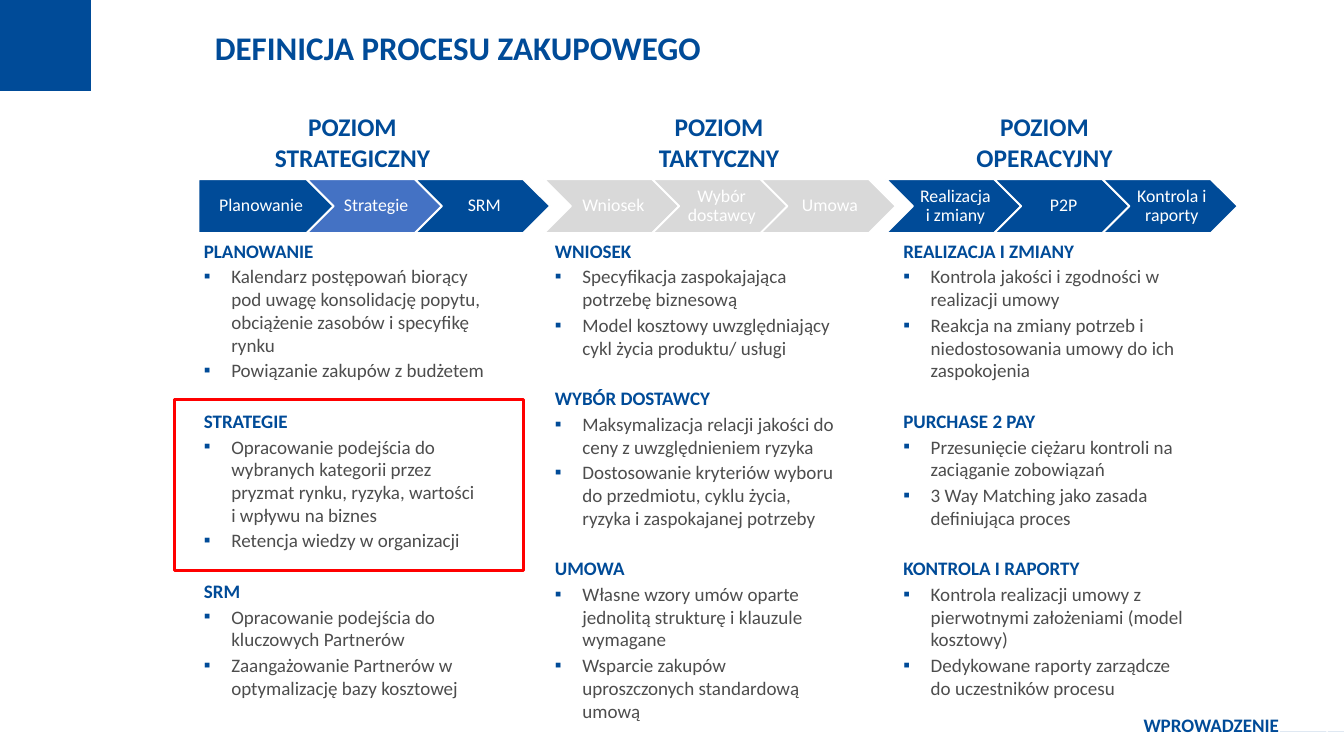
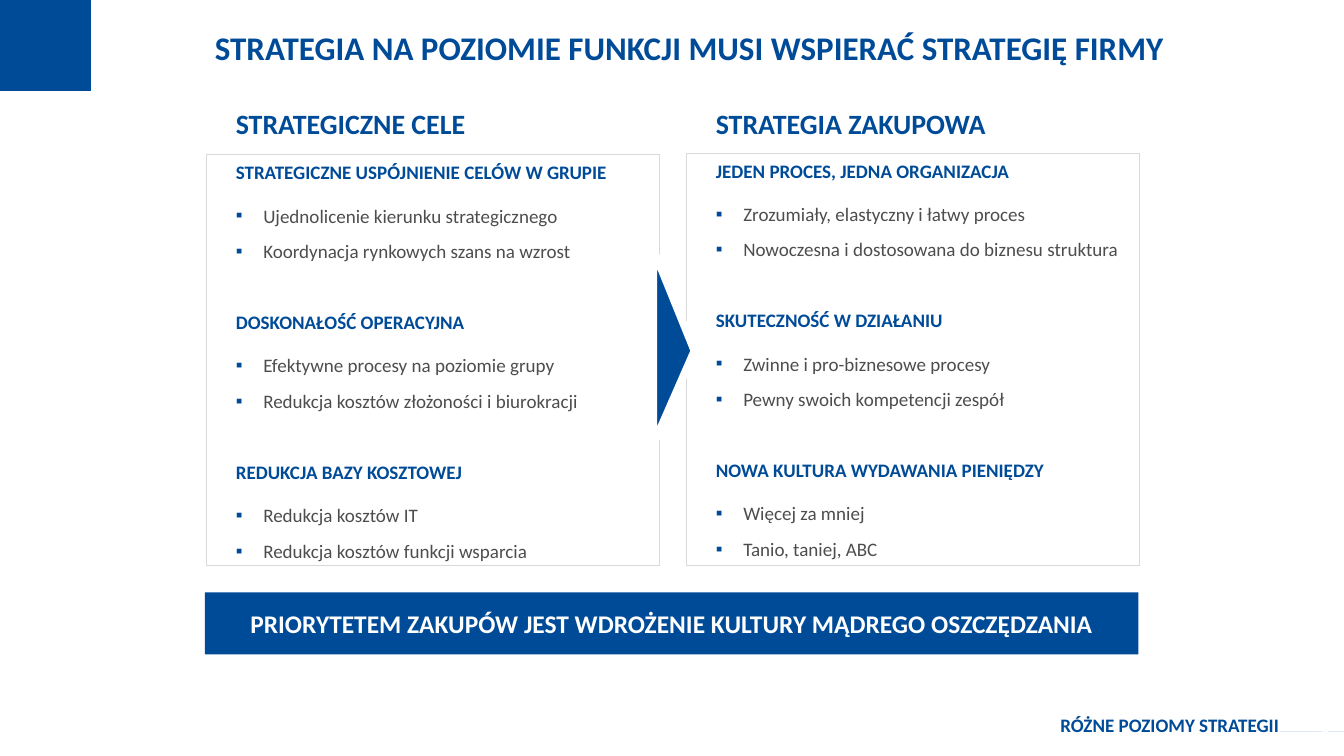
"""Build two slides on the purchasing process and the purchasing strategy."""
from dataclasses import dataclass
from typing import Any

from pptx import Presentation
from pptx import util as u
from pptx.dml.color import RGBColor
from pptx.enum import shapes, text
from pptx.oxml import ns
from lxml import etree

NAVY = RGBColor(0x00, 0x4B, 0x98)
BLUE = RGBColor(0x44, 0x72, 0xC4)
SILVER = RGBColor(0xD9, 0xD9, 0xD9)
GRAPHITE = RGBColor(0x4D, 0x4D, 0x4D)
WHITE = RGBColor(0xFF, 0xFF, 0xFF)
RED = RGBColor(0xFF, 0x00, 0x00)

SHAPE = shapes.MSO_SHAPE
LEFT, CENTER, RIGHT = text.PP_ALIGN.LEFT, text.PP_ALIGN.CENTER, text.PP_ALIGN.RIGHT
TOP, MIDDLE = text.MSO_ANCHOR.TOP, text.MSO_ANCHOR.MIDDLE
TEXT_INSETS = (0.11, 0.05, 0.11, 0.05)
BANDS = (
    ((0, 0.12), (0.96, 0.12), (0.64, 0.91), (0, 0.91)),
    ((14.22, 7.76), (14.7, 7.76), (14.7, 8.16), (14.06, 8.16)),
)
CHEVRON_TOP, CHEVRON_WIDTH, CHEVRON_HEIGHT = 1.96, 1.48, 0.59
CHEVRON_STEP = CHEVRON_WIDTH * 0.8


@dataclass(frozen=True)
class Box:
    """A rectangle in inches."""

    left: float
    top: float
    width: float
    height: float

    def lengths(self) -> tuple[u.Length, ...]:
        """Return the four values as lengths."""
        return tuple(u.Inches(value) for value in (self.left, self.top, self.width, self.height))


@dataclass(frozen=True)
class Style:
    """The look of one paragraph, with lengths in points and indents in inches."""

    size: float
    color: RGBColor
    bold: bool = True
    align: Any = LEFT
    line: float = 1.0
    before: float = 0
    after: float = 0
    margin: float = 0
    hanging: float = 0


@dataclass(frozen=True)
class Topic:
    """A heading with its bullet points."""

    heading: str
    points: tuple[str, ...]


@dataclass(frozen=True)
class Spacing:
    """Paragraph spacing of a topic list in points."""

    before: float
    heading_after: float
    point_after: float
    topic_gap: float


@dataclass(frozen=True)
class Level:
    """One process level: its caption, chevrons and list of topics."""

    caption: str
    caption_left: float
    chevron_left: float
    steps: tuple[str, ...]
    fills: tuple[RGBColor, ...]
    placeholder: int
    list_left: float
    topics: tuple[Topic, ...]


@dataclass(frozen=True)
class Panel:
    """A framed list with its heading."""

    heading: str
    heading_placeholder: int
    list_placeholder: int
    frame: Box
    list_box: Box
    topics: tuple[Topic, ...]


TITLE = Style(26, NAVY, line=0.9)
FOOTER = Style(15, NAVY, align=RIGHT, line=0.8)
NUMBER = Style(12, WHITE, align=RIGHT)
CAPTION = Style(20, NAVY, align=CENTER)
CHEVRON = Style(14, WHITE, bold=False, align=CENTER, line=0.9)
PANEL_HEADING = Style(22, NAVY, margin=0.21)
BANNER = Style(20, WHITE, align=CENTER)
PROCESS_SPACING = Spacing(1, 1, 1, 21)
STRATEGY_SPACING = Spacing(0, 16, 10, 28)

LEVELS = (
    Level("POZIOM STRATEGICZNY", 2.75, 2.17, ("Planowanie", "Strategie", "SRM"),
          (NAVY, BLUE, NAVY), 1, 1.91, (
        Topic("PLANOWANIE", (
            "Kalendarz postępowań biorący pod uwagę konsolidację popytu, "
            "obciążenie zasobów i specyfikę rynku",
            "Powiązanie zakupów z budżetem")),
        Topic("STRATEGIE", (
            "Opracowanie podejścia do wybranych kategorii przez pryzmat rynku, "
            "ryzyka, wartości\ni wpływu na biznes",
            "Retencja wiedzy w organizacji")),
        Topic("SRM", (
            "Opracowanie podejścia do kluczowych Partnerów",
            "Zaangażowanie Partnerów w optymalizację bazy kosztowej")))),
    Level("POZIOM TAKTYCZNY", 6.76, 5.95, ("Wniosek", "Wybór dostawcy", "Umowa"),
          (SILVER,) * 3, 2, 5.75, (
        Topic("WNIOSEK", (
            "Specyfikacja zaspokajająca potrzebę biznesową",
            "Model kosztowy uwzględniający cykl życia produktu/ usługi")),
        Topic("WYBÓR DOSTAWCY", (
            "Maksymalizacja relacji jakości do ceny z uwzględnieniem ryzyka",
            "Dostosowanie kryteriów wyboru do przedmiotu, cyklu życia, "
            "ryzyka i zaspokajanej potrzeby")),
        Topic("UMOWA", (
            "Własne wzory umów oparte jednolitą strukturę i klauzule wymagane",
            "Wsparcie zakupów uproszczonych standardową umową")))),
    Level("POZIOM OPERACYJNY", 10.32, 9.69, ("Realizacja i zmiany", "P2P", "Kontrola i raporty"),
          (NAVY,) * 3, 4, 9.56, (
        Topic("REALIZACJA I ZMIANY", (
            "Kontrola jakości i zgodności w realizacji umowy",
            "Reakcja na zmiany potrzeb i niedostosowania umowy do ich zaspokojenia")),
        Topic("PURCHASE 2 PAY", (
            "Przesunięcie ciężaru kontroli na zaciąganie zobowiązań",
            "3 Way Matching jako zasada definiująca proces")),
        Topic("KONTROLA I RAPORTY", (
            "Kontrola realizacji umowy z pierwotnymi założeniami (model kosztowy)",
            "Dedykowane raporty zarządcze do uczestników procesu")))),
)

PANELS = (
    Panel("STRATEGICZNE CELE", 1, 2, Box(2.26, 1.69, 4.95, 4.5), Box(2.26, 1.71, 4.79, 4.46), (
        Topic("STRATEGICZNE USPÓJNIENIE CELÓW W GRUPIE", (
            "Ujednolicenie kierunku strategicznego", "Koordynacja rynkowych szans na wzrost")),
        Topic("DOSKONAŁOŚĆ OPERACYJNA", (
            "Efektywne procesy na poziomie grupy", "Redukcja kosztów złożoności i biurokracji")),
        Topic("REDUKCJA BAZY KOSZTOWEJ", (
            "Redukcja kosztów IT", "Redukcja kosztów funkcji wsparcia")))),
    Panel("STRATEGIA ZAKUPOWA", 3, 4, Box(7.51, 1.68, 4.95, 4.51), Box(7.51, 1.69, 4.92, 4.49), (
        Topic("JEDEN PROCES, JEDNA ORGANIZACJA", (
            "Zrozumiały, elastyczny i łatwy proces",
            "Nowoczesna i dostosowana do biznesu struktura")),
        Topic("SKUTECZNOŚĆ W DZIAŁANIU", (
            "Zwinne i pro-biznesowe procesy", "Pewny swoich kompetencji zespół")),
        Topic("NOWA KULTURA WYDAWANIA PIENIĘDZY", (
            "Więcej za mniej", "Tanio, taniej, ABC")))),
)


def set_values(target: Any, values: dict[str, Any]) -> None:
    """Set each named attribute of the target."""
    for name, value in values.items():
        setattr(target, name, value)


def set_bullet(paragraph: Any, style: Style) -> None:
    """Set the indents, and a square bullet when the style hangs."""
    properties = paragraph._p.get_or_add_pPr()
    properties.set("marL", str(u.Inches(style.margin)))
    properties.set("indent", str(u.Inches(-style.hanging)))
    if style.hanging:
        color = etree.SubElement(properties, ns.qn("a:buClr"))
        etree.SubElement(color, ns.qn("a:srgbClr")).set("val", str(NAVY))
        etree.SubElement(properties, ns.qn("a:buChar")).set("char", "▪")
    else:
        etree.SubElement(properties, ns.qn("a:buNone"))


def write(shape: Any, lines: list[tuple[str, Style]], anchor: Any = TOP,
          insets: tuple[float, ...] = TEXT_INSETS) -> None:
    """Fill a shape with styled paragraphs."""
    frame = shape.text_frame
    sides = ("margin_left", "margin_top", "margin_right", "margin_bottom")
    set_values(frame, dict(zip(sides, map(u.Inches, insets))))
    set_values(frame, {"word_wrap": True, "auto_size": text.MSO_AUTO_SIZE.NONE,
                       "vertical_anchor": anchor})
    for index, (words, style) in enumerate(lines):
        paragraph = frame.add_paragraph() if index else frame.paragraphs[0]
        paragraph.text = words
        set_bullet(paragraph, style)
        set_values(paragraph, {"alignment": style.align, "line_spacing": style.line,
                               "space_before": u.Pt(style.before if index else 0),
                               "space_after": u.Pt(style.after)})
        for run in paragraph.runs:
            set_values(run.font, {"name": "Calibri", "size": u.Pt(style.size), "bold": style.bold})
            run.font.color.rgb = style.color


def add_text(slide: Any, box: Box, words: str, style: Style) -> None:
    """Add a text box with one paragraph."""
    write(slide.shapes.add_textbox(*box.lengths()), [(words, style)])


def fill_placeholder(slide: Any, index: int, box: Box, lines: list[tuple[str, Style]]) -> None:
    """Move a placeholder and write its paragraphs."""
    placeholder = slide.placeholders[index]
    set_values(placeholder, dict(zip(("left", "top", "width", "height"), box.lengths())))
    write(placeholder, lines)


def topic_lines(topics: tuple[Topic, ...], spacing: Spacing) -> list[tuple[str, Style]]:
    """Turn topics into styled heading and bullet paragraphs."""
    heading = Style(15, NAVY, before=spacing.topic_gap, after=spacing.heading_after, margin=0.21)
    point = Style(15, GRAPHITE, bold=False, before=spacing.before, after=spacing.point_after,
                  margin=0.51, hanging=0.3)
    return [line for topic in topics
            for line in [(topic.heading, heading), *((words, point) for words in topic.points)]]


def paint(shape: Any, fill: RGBColor | None, line: RGBColor | None = None,
          width: float = 1) -> None:
    """Set the fill and outline of a shape and drop its shadow."""
    shape.shadow.inherit = False
    for part, color in ((shape.fill, fill), (shape.line.fill, line)):
        if color is None:
            part.background()
        else:
            part.solid()
            part.fore_color.rgb = color
    if line is not None:
        shape.line.width = u.Pt(width)


def add_slide(presentation: Any, title: str, section: str, number: int) -> Any:
    """Add a slide with the shared bands, title and footer."""
    slide = presentation.slides.add_slide(presentation.slide_layouts[4])
    for start, *others in BANDS:
        builder = slide.shapes.build_freeform(*start, scale=float(u.Inches(1)))
        builder.add_line_segments(others)
        paint(builder.convert_to_shape(), NAVY)
    fill_placeholder(slide, 0, Box(2.24, 0.3, 11.73, 0.53), [(title, TITLE)])
    add_text(slide, Box(7.55, 7.8, 6.55, 0.32), section, FOOTER)
    add_text(slide, Box(13.88, 7.81, 0.77, 0.32), str(number), NUMBER)
    return slide


def add_level(slide: Any, level: Level) -> None:
    """Draw one process level."""
    for index, (step, fill) in enumerate(zip(level.steps, level.fills)):
        first = level is LEVELS[0] and index == 0
        box = Box(level.chevron_left + index * CHEVRON_STEP, CHEVRON_TOP,
                  CHEVRON_WIDTH, CHEVRON_HEIGHT)
        chevron = slide.shapes.add_shape(SHAPE.PENTAGON if first else SHAPE.CHEVRON, *box.lengths())
        paint(chevron, fill, WHITE, 1.5)
        write(chevron, [(step, CHEVRON)], MIDDLE, (0.06, 0.04, 0.02, 0.04))
    add_text(slide, Box(level.caption_left, 1.17, 2.21, 0.79), level.caption, CAPTION)
    fill_placeholder(slide, level.placeholder, Box(level.list_left, 2.57, 3.5, 5.2),
                     topic_lines(level.topics, PROCESS_SPACING))


def add_panel(slide: Any, panel: Panel) -> None:
    """Draw one framed list behind its texts."""
    frame = slide.shapes.add_shape(SHAPE.RECTANGLE, *panel.frame.lengths())
    paint(frame, WHITE, SILVER)
    slide.shapes.element.insert(2, frame.element)
    fill_placeholder(slide, panel.heading_placeholder, Box(panel.frame.left, 1.12, 4.95, 0.55),
                     [(panel.heading, PANEL_HEADING)])
    fill_placeholder(slide, panel.list_placeholder, panel.list_box,
                     topic_lines(panel.topics, STRATEGY_SPACING))


def build_process(presentation: Any) -> None:
    """Build the slide that defines the purchasing process."""
    slide = add_slide(presentation, "DEFINICJA PROCESU ZAKUPOWEGO", "WPROWADZENIE", 4)
    for level in LEVELS:
        add_level(slide, level)
    highlight = slide.shapes.add_shape(SHAPE.RECTANGLE, *Box(1.91, 4.37, 3.82, 1.87).lengths())
    paint(highlight, None, RED, 2.25)
    unused = slide.placeholders[3].element
    unused.getparent().remove(unused)


def build_strategy(presentation: Any) -> None:
    """Build the slide that links goals with the purchasing strategy."""
    slide = add_slide(presentation, "STRATEGIA NA POZIOMIE FUNKCJI MUSI WSPIERAĆ STRATEGIĘ FIRMY",
                      "RÓŻNE POZIOMY STRATEGII", 6)
    for panel in PANELS:
        add_panel(slide, panel)
    arrow = slide.shapes.add_shape(SHAPE.ISOSCELES_TRIANGLE, *Box(6.3, 3.57, 2.14, 0.45).lengths())
    arrow.adjustments[0] = 0.52
    arrow.rotation = 90
    paint(arrow, NAVY, WHITE, 6)
    banner = slide.shapes.add_shape(SHAPE.RECTANGLE, *Box(2.24, 6.48, 10.21, 0.68).lengths())
    paint(banner, NAVY)
    write(banner, [("PRIORYTETEM ZAKUPÓW JEST WDROŻENIE KULTURY MĄDREGO OSZCZĘDZANIA", BANNER)],
          MIDDLE, (0, 0, 0, 0))


def main() -> None:
    """Build and save the presentation."""
    presentation = Presentation()
    set_values(presentation, {"slide_width": u.Inches(14.7), "slide_height": u.Inches(8.27)})
    build_process(presentation)
    build_strategy(presentation)
    presentation.save("out.pptx")


if __name__ == "__main__":
    main()
